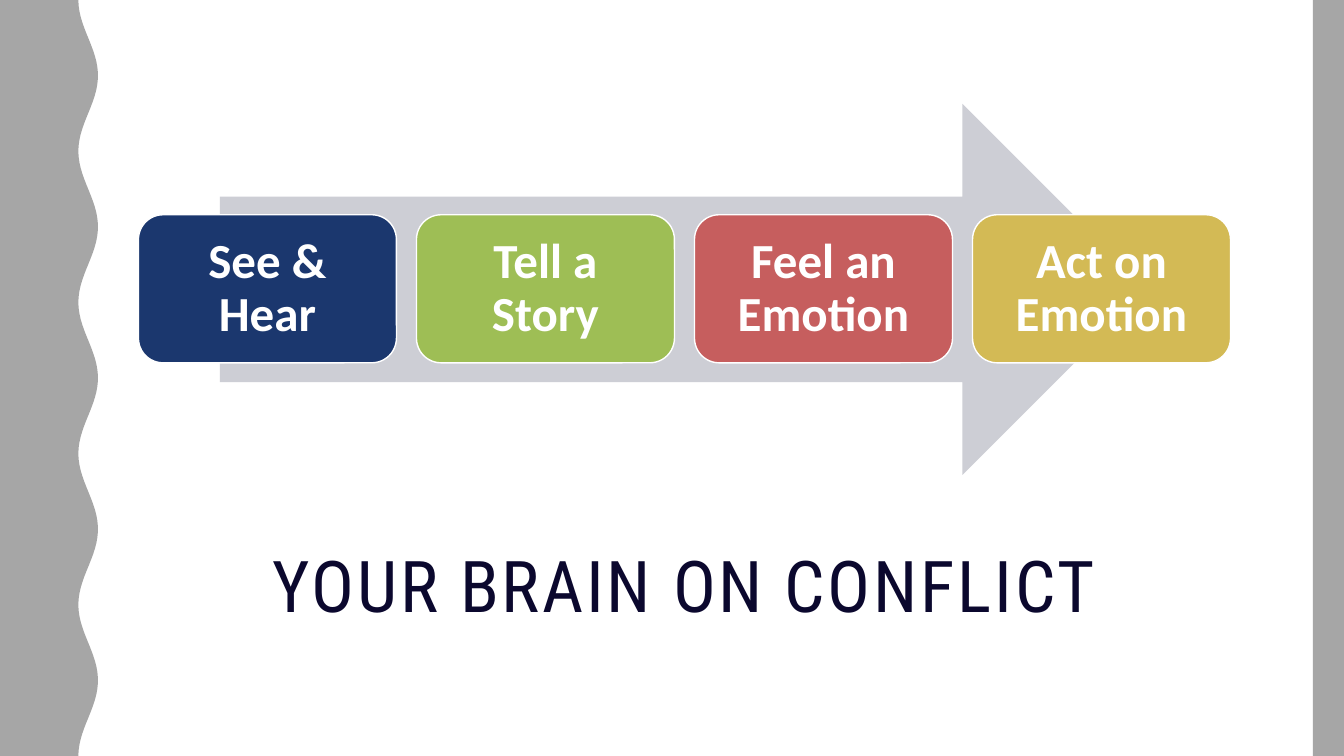
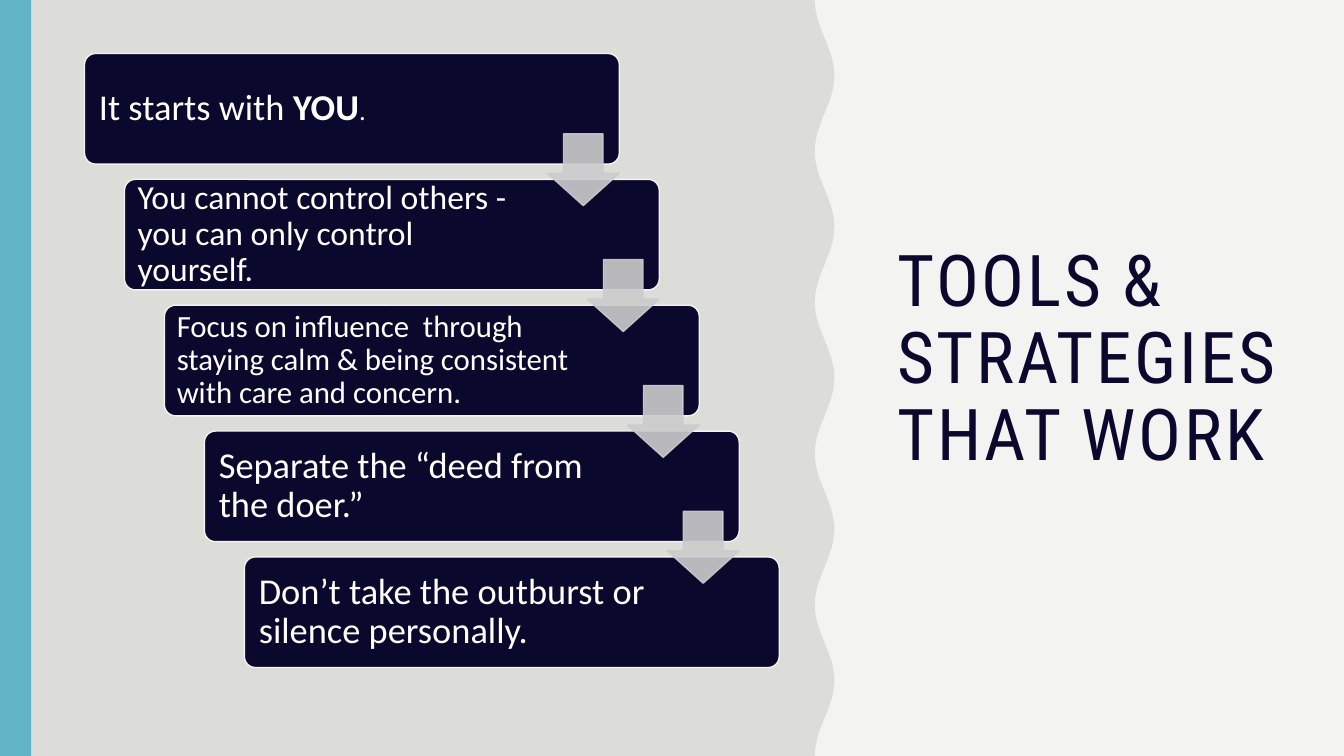
import math

import lxml.etree
import pptx
import pptx.dml.color
import pptx.enum.shapes
import pptx.enum.text
import pptx.oxml.ns
import pptx.util

Pt = pptx.util.Pt
RGB = pptx.dml.color.RGBColor.from_string
SHAPE = pptx.enum.shapes.MSO_SHAPE
ALIGN = pptx.enum.text.PP_ALIGN
ANCHOR = pptx.enum.text.MSO_ANCHOR
qn = pptx.oxml.ns.qn

COLORS = {
    "white": "FFFFFF", "paper": "F3F3F2", "stone": "DCDCD9", "grey": "A6A6A6",
    "navy": "0B082E", "teal": "62B4C6", "pale": "CDCED5", "silver": "CCCCCD",
    "blue": "1B376E", "green": "9EBE55", "red": "C65E5E", "gold": "D3BA55",
}
TITLE_FONT, BODY_FONT = "Roboto Condensed", "Calibri"
WIDTH, HEIGHT = 960, 540
WAVE_PERIOD, WAVE_SWING, WAVE_STEP = 108, 7, 4
BAR_WIDTH = 22.3


def add_block(s, kind, x, y, w, h, fill, line=None):
    sp = s.shapes.add_shape(kind, Pt(x), Pt(y), Pt(w), Pt(h))
    sp.shadow.inherit = False
    sp.fill.solid()
    sp.fill.fore_color.rgb = RGB(COLORS[fill])
    if line:
        sp.line.color.rgb = RGB(COLORS[line])
        sp.line.width = Pt(1)
    else:
        sp.line.fill.background()
    return sp


def write_text(sp, runs, align, inset, extra_right=0):
    """Fill a block with (text, size, bold) runs."""
    tf = sp.text_frame
    tf.word_wrap = True
    tf.vertical_anchor = ANCHOR.MIDDLE
    tf.margin_left = tf.margin_top = tf.margin_bottom = Pt(inset)
    tf.margin_right = Pt(inset + extra_right)
    p = tf.paragraphs[0]
    p.alignment = align
    p.line_spacing = 0.9
    for text, size, bold in runs:
        r = p.add_run()
        r.text = text
        r.font.name = BODY_FONT
        r.font.size = Pt(size)
        r.font.bold = bold
        r.font.color.rgb = RGB(COLORS["white"])


prs = pptx.Presentation()
prs.slide_width, prs.slide_height = Pt(WIDTH), Pt(HEIGHT)

# Shared frame: background, wavy panel, side bar and title
frames = [
    dict(title="YOUR BRAIN ON CONFLICT", box=(98.6, 389.5, 780.5, 100),
         align=ALIGN.CENTER, anchor=ANCHOR.TOP, bg="white",
         wave_x=63, panel="grey", bar_x=WIDTH - BAR_WIDTH, bar="grey"),
    dict(title="TOOLS & STRATEGIES THAT WORK", box=(633.6, 38, 290, 438.5),
         align=ALIGN.LEFT, anchor=ANCHOR.MIDDLE, bg="paper",
         wave_x=589, panel="stone", bar_x=0, bar="teal"),
]
slides = []
for frame in frames:
    s = prs.slides.add_slide(prs.slide_layouts[5])
    slides.append(s)
    s.background.fill.solid()
    s.background.fill.fore_color.rgb = RGB(COLORS[frame["bg"]])

    edge = []
    for y in range(0, HEIGHT + 1, WAVE_STEP):
        x = frame["wave_x"] - WAVE_SWING * math.cos(2 * math.pi * y / WAVE_PERIOD)
        edge.append((Pt(x), Pt(y)))
    builder = s.shapes.build_freeform(0, 0)
    builder.add_line_segments(edge + [(0, Pt(HEIGHT))], close=True)
    panel = builder.convert_to_shape()
    panel.shadow.inherit = False
    panel.fill.solid()
    panel.fill.fore_color.rgb = RGB(COLORS[frame["panel"]])
    panel.line.fill.background()
    add_block(s, SHAPE.RECTANGLE, frame["bar_x"], 0, BAR_WIDTH, HEIGHT, frame["bar"])

    title = s.shapes.title
    title.left, title.top, title.width, title.height = map(Pt, frame["box"])
    tf = title.text_frame
    tf.text = frame["title"]
    tf.word_wrap = True
    tf.auto_size = pptx.enum.text.MSO_AUTO_SIZE.NONE
    tf.vertical_anchor = frame["anchor"]
    p = tf.paragraphs[0]
    p.alignment = frame["align"]
    p.line_spacing = 0.9
    r = p.runs[0]
    r.font.name = TITLE_FONT
    r.font.size = Pt(51)
    r.font.color.rgb = RGB(COLORS["navy"])
    r.font._element.set("spc", "200")

brain, tools = slides

# Slide 1: four stages on an arrow
add_block(brain, SHAPE.RIGHT_ARROW, 157, 74.2, 663, 265, "pale")
stages = [("See & Hear", "blue"), ("Tell a Story", "green"),
          ("Feel an Emotion", "red"), ("Act on Emotion", "gold")]
for i, (text, color) in enumerate(stages):
    sp = add_block(brain, SHAPE.ROUNDED_RECTANGLE, 98.9 + 198.6 * i, 153.4,
                   184.3, 105.8, color, "white")
    write_text(sp, [(text, 35, True)], ALIGN.CENTER, 10.8)

# Slide 2: staircase of strategies
STEP_X, STEP_Y = 28.55, 89.9
steps = [
    (8, [("It starts with ", 26, False), ("YOU", 26, True), (".", 19, False)]),
    (7.2, [("You cannot control others - you can only control yourself.", 24, False)]),
    (6.5, [("Focus on influence  through staying calm & being consistent "
            "with care and concern.", 22, False)]),
    (8, [("Separate the “deed from the doer.”", 26, False)]),
    (8, [("Don’t take the outburst or silence personally.", 26, False)]),
]
for i, (inset, runs) in enumerate(steps):
    sp = add_block(tools, SHAPE.ROUNDED_RECTANGLE, 60.4 + STEP_X * i, 38.2 + STEP_Y * i,
                   382, 79, "navy", "paper")
    sp.adjustments[0] = 0.1
    write_text(sp, runs, ALIGN.LEFT, inset, extra_right=80)

# Translucent arrows between the steps
for i in range(len(steps) - 1):
    sp = add_block(tools, SHAPE.DOWN_ARROW, 391 + STEP_X * i, 95.6 + STEP_Y * i,
                   51.3, 51.3, "silver", "silver")
    sp.adjustments[0], sp.adjustments[1] = 0.55, 0.45
    for color in sp._element.spPr.iter(qn("a:srgbClr")):
        lxml.etree.SubElement(color, qn("a:alpha")).set("val", "90000")

prs.save("out.pptx")
